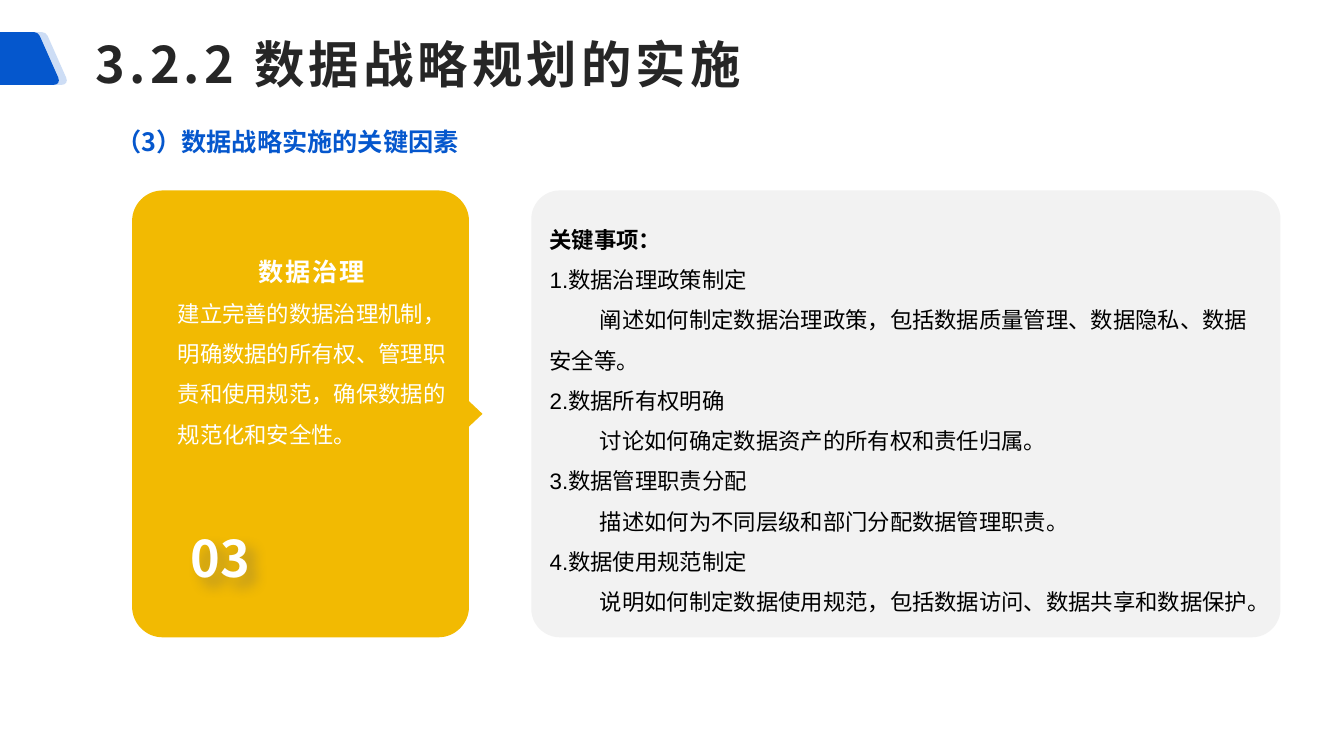
from math import hypot

from lxml.etree import SubElement
from pptx import Presentation
from pptx.dml.color import RGBColor
from pptx.enum.shapes import MSO_SHAPE
from pptx.enum.text import MSO_ANCHOR, PP_ALIGN
from pptx.oxml.ns import qn
from pptx.util import Cm, Pt

BLUE = RGBColor(0x05, 0x57, 0xCD)
GOLD = RGBColor(0xF2, 0xBA, 0x02)
PALE = RGBColor(0xF2, 0xF2, 0xF2)
DARK = RGBColor(0x26, 0x26, 0x26)
BLACK = RGBColor(0, 0, 0)
WHITE = RGBColor(0xFF, 0xFF, 0xFF)
CJK = "Noto Sans CJK SC"
LATIN = "Arial"

TITLE = "3.2.2 数据战略规划的实施"
SUBTITLE = "（3）数据战略实施的关键因素"
CARD_TITLE = "数据治理"
CARD_BODY = "建立完善的数据治理机制，明确数据的所有权、管理职责和使用规范，确保数据的规范化和安全性。"
CARD_NUMBER = "03"
MATTERS_TITLE = "关键事项："
MATTERS = [
    ("数据治理政策制定", "阐述如何制定数据治理政策，包括数据质量管理、数据隐私、数据安全等。"),
    ("数据所有权明确", "讨论如何确定数据资产的所有权和责任归属。"),
    ("数据管理职责分配", "描述如何为不同层级和部门分配数据管理职责。"),
    ("数据使用规范制定", "说明如何制定数据使用规范，包括数据访问、数据共享和数据保护。"),
]

# Centimetres
PANEL_TOP, PANEL_HEIGHT = 4.8, 11.26
PANEL_BOTTOM = PANEL_TOP + PANEL_HEIGHT
CARD_LEFT, CARD_RIGHT, CARD_RADIUS = 3.33, 11.82, 0.77
POINTER_WIDTH, POINTER_HALF = 0.34, 0.32
POINTER_MIDDLE = PANEL_TOP + PANEL_HEIGHT / 2
INDENT = Cm(1.27)

# Corners as x, y, radius
TAB = [(-0.12, 0.81, 0.1), (0.96, 0.81, 0.1), (1.55, 2.14, 0.2), (-0.71, 2.14, 0.2)]
TAB_SHIFT = 0.2
CARD = [
    (CARD_LEFT, PANEL_TOP, CARD_RADIUS),
    (CARD_RIGHT, PANEL_TOP, CARD_RADIUS),
    (CARD_RIGHT, POINTER_MIDDLE - POINTER_HALF, 0),
    (CARD_RIGHT + POINTER_WIDTH, POINTER_MIDDLE, 0),
    (CARD_RIGHT, POINTER_MIDDLE + POINTER_HALF, 0),
    (CARD_RIGHT, PANEL_BOTTOM, CARD_RADIUS),
    (CARD_LEFT, PANEL_BOTTOM, CARD_RADIUS),
]


def toward(start, end, distance):
    length = hypot(end[0] - start[0], end[1] - start[1])
    return tuple(Cm(start[i] + (end[i] - start[i]) * distance / length) for i in (0, 1))


def paint(shape, color):
    shape.shadow.inherit = False
    shape.fill.solid()
    shape.fill.fore_color.rgb = color
    shape.line.fill.background()
    return shape


def add_outline(page, corners, color):
    """Draw a polygon whose corners with a radius become cubic curves."""
    points, controls = [], {}
    for index, corner in enumerate(corners):
        before, after = corners[index - 1], corners[(index + 1) % len(corners)]
        radius = corner[2]
        if not radius:
            points.append((Cm(corner[0]), Cm(corner[1])))
            continue
        points += [toward(corner, before, radius), toward(corner, after, radius)]
        controls[len(points) - 1] = [toward(corner, before, radius * 0.45),
                                     toward(corner, after, radius * 0.45)]
    builder = page.shapes.build_freeform(*points[0], scale=1.0)
    builder.add_line_segments(points[1:], close=True)
    shape = builder.convert_to_shape()
    segments = list(next(shape._element.iter(qn("a:path"))))
    for position, handles in controls.items():
        segment = segments[position]
        curve = segment.makeelement(qn("a:cubicBezTo"))
        for x, y in handles + [points[position]]:
            SubElement(curve, qn("a:pt"), x=str(x - shape.left), y=str(y - shape.top))
        segment.getparent().replace(segment, curve)
    return paint(shape, color)


def set_frame(shape, anchor, insets=(0.25, 0.13, 0.25, 0.13), wrap=True):
    frame = shape.text_frame
    frame.word_wrap = wrap
    frame.vertical_anchor = anchor
    frame.margin_left, frame.margin_top, frame.margin_right, frame.margin_bottom = map(Cm, insets)
    return frame


def add_para(frame, text, size, color, font=CJK, bold=False, align=PP_ALIGN.LEFT,
             line_spacing=1.5, indent=0, tracking=0):
    first = frame.paragraphs[0]
    para = first if not first.runs else frame.add_paragraph()
    para.alignment = align
    para.line_spacing = line_spacing
    if indent:
        properties = para._p.get_or_add_pPr()
        properties.set("marL", "0")
        properties.set("indent", str(indent))
    span = para.add_run()
    span.text = text
    span.font.size, span.font.bold, span.font.name = Pt(size), bold, font
    span.font.color.rgb = color
    properties = span._r.get_or_add_rPr()
    if tracking:
        properties.set("spc", str(round(tracking * 100)))
    SubElement(properties, qn("a:ea")).set("typeface", CJK)


def add_box(page, left, top, width, height):
    return page.shapes.add_textbox(Cm(left), Cm(top), Cm(width), Cm(height))


def add_soft_shadow(shape):
    effects = SubElement(shape._element.spPr, qn("a:effectLst"))
    shadow = SubElement(effects, qn("a:outerShdw"), blurRad=str(Cm(0.35)),
                        dist=str(Cm(0.3)), dir="2700000", algn="tl", rotWithShape="0")
    color = SubElement(shadow, qn("a:srgbClr"), val="595959")
    SubElement(color, qn("a:alpha"), val="40000")


deck = Presentation()
deck.slide_width, deck.slide_height = Cm(33.87), Cm(19.05)
page = deck.slides.add_slide(deck.slide_layouts[6])

back_tab = add_outline(page, [(x + TAB_SHIFT, y, r) for x, y, r in TAB], BLUE)
back_color = back_tab._element.spPr.find(qn("a:solidFill"))[0]
SubElement(back_color, qn("a:alpha"), val="20000")
add_outline(page, TAB, BLUE)

card = add_outline(page, CARD, GOLD)
frame = set_frame(card, MSO_ANCHOR.TOP, (1.15, 1.28, 0.92, 2.29))
add_para(frame, CARD_TITLE, 18, WHITE, bold=True, align=PP_ALIGN.CENTER, tracking=1.3)
add_para(frame, CARD_BODY, 16, WHITE)

number = add_box(page, 4.35, 13.08, 2.39, 1.93)
frame = set_frame(number, MSO_ANCHOR.MIDDLE, (0, 0, 0, 0), wrap=False)
add_para(frame, CARD_NUMBER, 36, WHITE, bold=True, align=PP_ALIGN.CENTER, line_spacing=1.0)
add_soft_shadow(number)

matters = paint(page.shapes.add_shape(MSO_SHAPE.ROUNDED_RECTANGLE, Cm(13.39), Cm(PANEL_TOP),
                                      Cm(18.88), Cm(PANEL_HEIGHT)), PALE)
matters.adjustments[0] = 0.064
frame = set_frame(matters, MSO_ANCHOR.MIDDLE)
add_para(frame, MATTERS_TITLE, 16, BLACK, font=LATIN, bold=True)
for order, (matter, detail) in enumerate(MATTERS, 1):
    add_para(frame, f"{order}.{matter}", 16, BLACK, font=LATIN)
    add_para(frame, detail, 16, BLACK, font=LATIN, indent=INDENT)

frame = set_frame(add_box(page, 2.23, 0.66, 28.78, 1.88), MSO_ANCHOR.MIDDLE,
                  (0.18, 0.08, 0.18, 0.08))
add_para(frame, TITLE, 36, DARK, bold=True, line_spacing=1.0, tracking=3)

frame = set_frame(add_box(page, 1.41, 2.67, 16.94, 1.4), MSO_ANCHOR.TOP)
add_para(frame, SUBTITLE, 18, BLUE, bold=True, align=PP_ALIGN.JUSTIFY, indent=INDENT)

deck.save("out.pptx")
